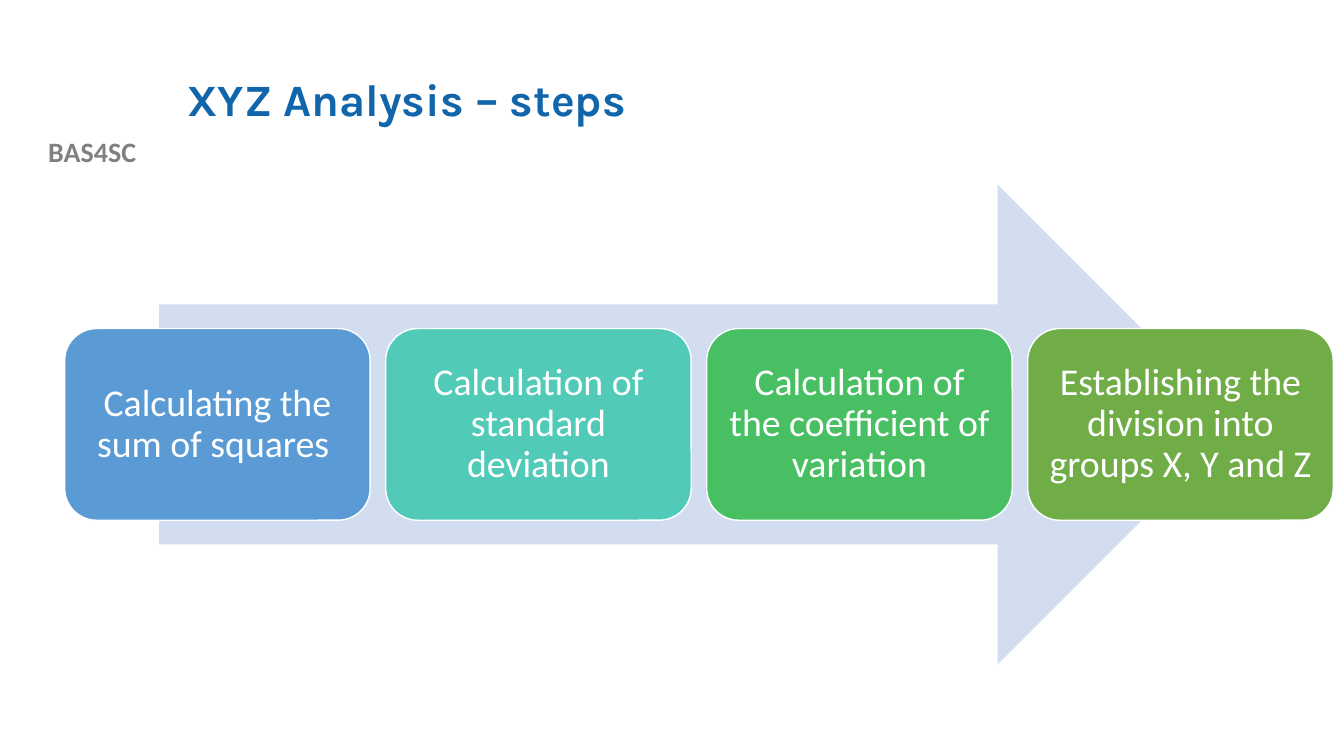
from dataclasses import dataclass

from pptx import Presentation
from pptx.dml.color import RGBColor
from pptx.enum.shapes import MSO_SHAPE as Shape
from pptx.enum.text import MSO_ANCHOR as Anchor, PP_ALIGN as Align
from pptx.util import Cm, Pt


@dataclass(frozen=True)
class Theme:
    title_blue: str = "1065AB"
    label_grey: str = "808080"
    arrow_blue: str = "D2DEEF"
    white: str = "FFFFFF"
    steps: tuple = ("5B9BD5", "52CAB8", "49BF64", "70AD47")
    title_font: str = "Karla"
    body_font: str = "Calibri"
    title_size: int = 32
    label_size: int = 20
    step_size: int = 27


theme = Theme()


def write(shape, text, font_name, size, color, align, bold=False, spacing=None):
    """Put one formatted, vertically centred paragraph into the shape."""
    frame = shape.text_frame
    frame.text = text
    frame.word_wrap = True
    frame.vertical_anchor = Anchor.MIDDLE
    paragraph = frame.paragraphs[0]
    paragraph.alignment = align
    paragraph.line_spacing = spacing
    font = paragraph.runs[0].font
    font.name, font.size, font.bold = font_name, Pt(size), bold
    font.color.rgb = RGBColor.from_string(color)


def add_filled(kind, left, top, width, height, color):
    shape = slide.shapes.add_shape(kind, Cm(left), Cm(top), Cm(width), Cm(height))
    shape.shadow.inherit = False
    shape.fill.solid()
    shape.fill.fore_color.rgb = RGBColor.from_string(color)
    return shape


prs = Presentation()
prs.slide_width, prs.slide_height = Cm(33.87), Cm(19.05)
slide = prs.slides.add_slide(prs.slide_layouts[6])

project = slide.shapes.add_textbox(Cm(0), Cm(3.25), Cm(4.65), Cm(1.12))
write(project, "BAS4SC", theme.body_font, theme.label_size, theme.label_grey,
      Align.CENTER, bold=True)

title = slide.shapes.add_textbox(Cm(4.47), Cm(1.02), Cm(27.08), Cm(3.1))
write(title, "XYZ Analysis – steps", theme.title_font, theme.title_size,
      theme.title_blue, Align.LEFT, bold=True, spacing=0.9)

arrow = add_filled(Shape.RIGHT_ARROW, 4.01, 4.65, 27.18, 12.09, theme.arrow_blue)
arrow.line.fill.background()

steps = (
    "Calculating the sum of squares ",
    "Calculation of standard deviation",
    "Calculation of the coefficient of variation",
    "Establishing the division into groups X, Y and Z",
)
first_left, step_top, step_width, step_height, step_gap = 1.63, 8.28, 7.7, 4.83, 0.39
for index, (text, color) in enumerate(zip(steps, theme.steps)):
    left = first_left + index * (step_width + step_gap)
    step = add_filled(Shape.ROUNDED_RECTANGLE, left, step_top, step_width,
                      step_height, color)
    step.line.color.rgb = RGBColor.from_string(theme.white)
    step.line.width = Pt(1)
    write(step, text, theme.body_font, theme.step_size, theme.white,
          Align.CENTER, spacing=0.9)
    frame = step.text_frame
    frame.margin_left = frame.margin_right = Cm(0.28)
    frame.margin_top = frame.margin_bottom = Cm(0.28)

prs.save("out.pptx")
